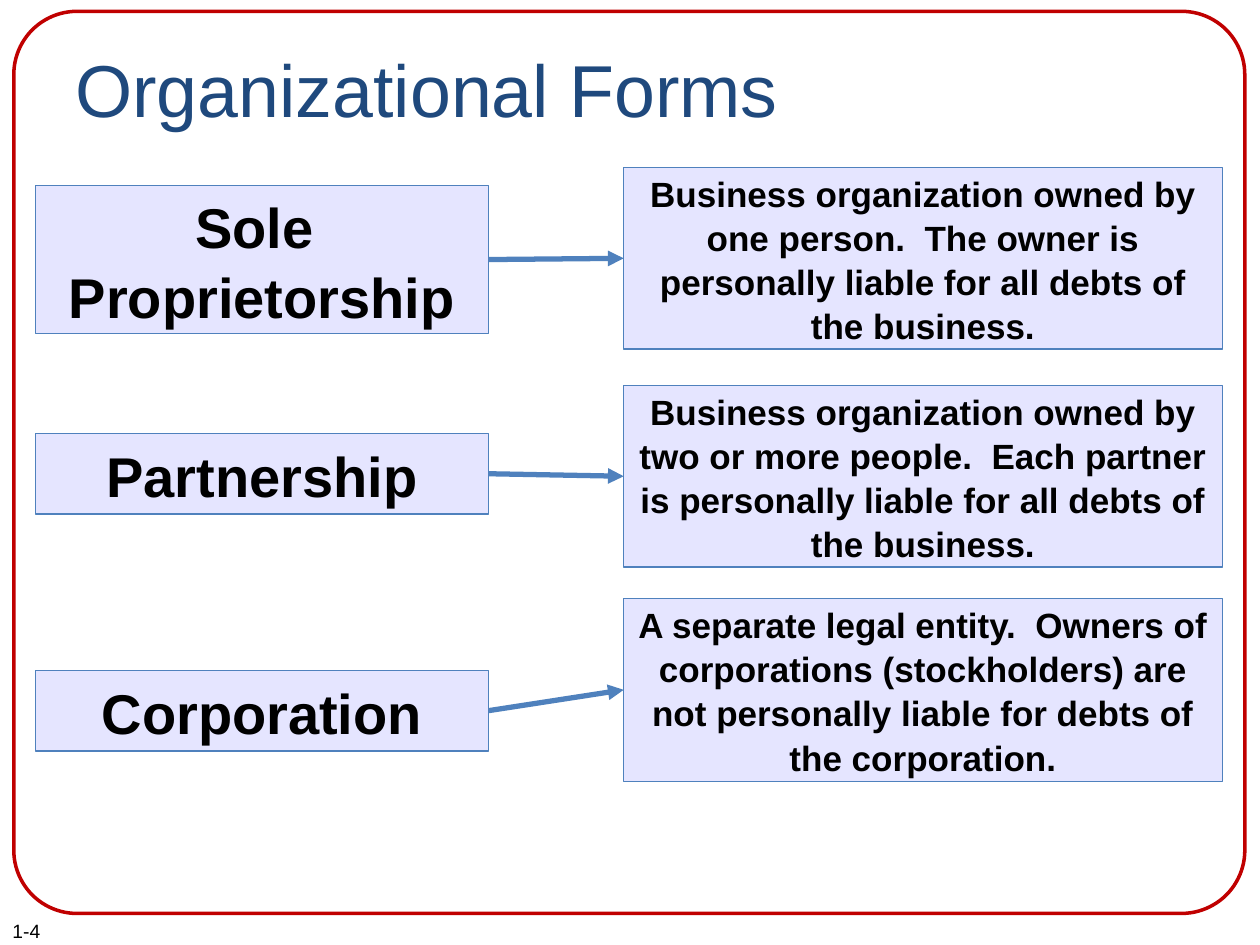
"""Build the slide on organizational forms of business."""
import dataclasses

import lxml.etree
import pptx
import pptx.dml.color
import pptx.enum.shapes
import pptx.enum.text
import pptx.oxml.ns
import pptx.util

Inches = pptx.util.Inches
Pt = pptx.util.Pt
Align = pptx.enum.text.PP_ALIGN
Anchor = pptx.enum.text.MSO_ANCHOR
Kind = pptx.enum.shapes.MSO_SHAPE
BLUE = "4F81BD"


@dataclasses.dataclass
class Form:
    name: str
    text: str
    top: float
    high: float
    note_top: float
    note_high: float = 1.44


FORMS = [
    Form("Sole \vProprietorship",
         "Business organization owned by one person.  The owner is "
         "personally liable for all debts of the business.",
         1.47, 1.18, 1.33),
    Form("Partnership",
         "Business organization owned by two or more people.  Each partner "
         "is personally liable for all debts of the business.",
         3.44, 0.64, 3.06),
    Form("Corporation",
         "A separate legal entity.  Owners of corporations (stockholders) "
         "are not personally liable for debts of the corporation.",
         5.32, 0.64, 4.75, 1.45),
]


def color(code: str):
    return pptx.dml.color.RGBColor.from_string(code)


def write(shape, text: str, *, size: float, ink: str = "000000",
          bold: bool = False, align=Align.LEFT, anchor=Anchor.TOP,
          space: float = 1.0) -> None:
    frame = shape.text_frame
    frame.word_wrap = True
    frame.vertical_anchor = anchor
    frame.text = text
    para = frame.paragraphs[0]
    para.alignment = align
    para.line_spacing = space
    for run in para.runs:
        run.font.name = "Arial"
        run.font.size = Pt(size)
        run.font.bold = bold
        run.font.color.rgb = color(ink)


def label(slide, text: str, left: float, top: float, wide: float,
          high: float, **style) -> None:
    box = slide.shapes.add_textbox(
        Inches(left), Inches(top), Inches(wide), Inches(high))
    write(box, text, **style)


def panel(slide, left: float, top: float, wide: float, high: float, *,
          kind=Kind.RECTANGLE, fill: str = "", edge: str = BLUE,
          width: float = 0.75):
    shape = slide.shapes.add_shape(
        kind, Inches(left), Inches(top), Inches(wide), Inches(high))
    shape.shadow.inherit = False
    if fill:
        shape.fill.solid()
        shape.fill.fore_color.rgb = color(fill)
    else:
        shape.fill.background()
    shape.line.color.rgb = color(edge)
    shape.line.width = Pt(width)
    return shape


def card(slide, text: str, left: float, top: float, wide: float,
         high: float, size: float):
    shape = panel(slide, left, top, wide, high, fill="E5E5FF")
    write(shape, text, size=size, bold=True, align=Align.CENTER,
          anchor=Anchor.MIDDLE, space=1.05)
    return shape


def arrow(slide, start, end) -> None:
    line = slide.shapes.add_connector(
        pptx.enum.shapes.MSO_CONNECTOR.STRAIGHT, 0, 0, 0, 0)
    line.begin_connect(start, 3)
    line.end_connect(end, 1)
    line.line.color.rgb = color(BLUE)
    line.line.width = Pt(3)
    qn = pptx.oxml.ns.qn
    props = line._element.spPr
    lxml.etree.SubElement(
        props.find(qn("a:ln")), qn("a:tailEnd"), type="triangle")
    lxml.etree.SubElement(props, qn("a:effectLst"))


def row(slide, form: Form) -> None:
    name = card(slide, form.name, 0.28, form.top, 3.6, form.high, 32)
    note = card(slide, form.text, 4.95, form.note_top, 4.75,
                form.note_high, 20)
    arrow(slide, name, note)


def main() -> None:
    deck = pptx.Presentation()
    deck.slide_width, deck.slide_height = Inches(10), Inches(7.5)
    slide = deck.slides.add_slide(deck.slide_layouts[6])
    label(slide, "1-4", 0, 7.25, 1.42, 0.29, size=11)
    frame = panel(slide, 0.11, 0.09, 9.77, 7.16, edge="C00000", width=2,
                  kind=Kind.ROUNDED_RECTANGLE)
    frame.adjustments[0] = 0.07
    label(slide, "Organizational Forms", 0.5, 0.3, 9, 1.25,
          size=42, ink="1F497D")
    for form in FORMS:
        row(slide, form)
    deck.save("out.pptx")


if __name__ == "__main__":
    main()
